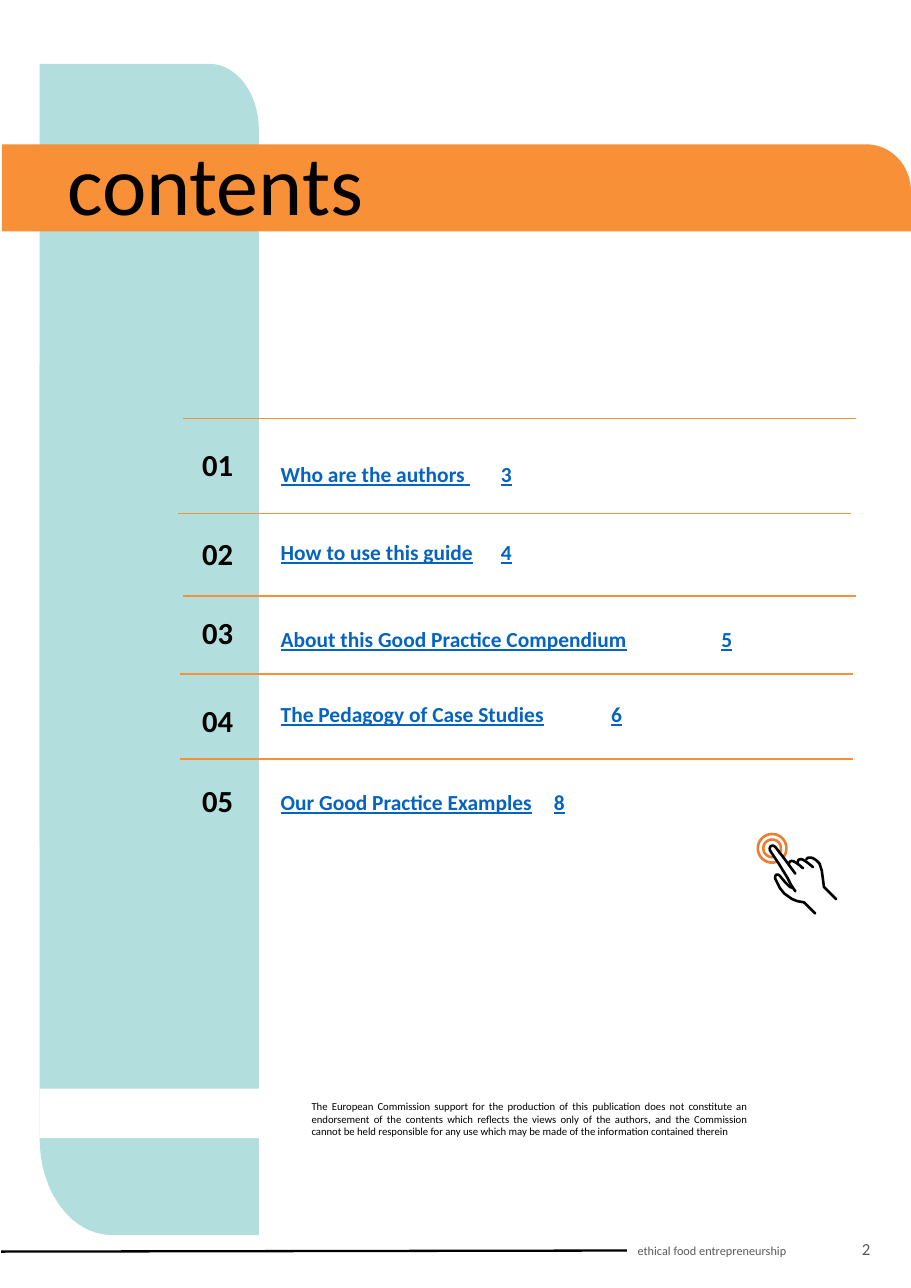
import math
import pptx
import pptx.util
import pptx.dml.color
import pptx.enum.shapes
import pptx.enum.text
import pptx.oxml
import pptx.oxml.ns
from pptx.util import Inches

RGBColor = pptx.dml.color.RGBColor
Align = pptx.enum.text.PP_ALIGN
Anchor = pptx.enum.text.MSO_ANCHOR

TEAL = RGBColor(0xB2, 0xDE, 0xDD)
ORANGE = RGBColor(0xF7, 0x90, 0x37)
RING = RGBColor(0xED, 0x7D, 0x31)
BLUE = RGBColor(0x05, 0x63, 0xC1)
GREY = RGBColor(0x59, 0x59, 0x59)
BLACK = RGBColor(0, 0, 0)
WHITE = RGBColor(255, 255, 255)
FONT = "Calibri"
GRID = 1000  # freeform units per inch


def node(tag, **attrs):
    item = pptx.oxml.parse_xml(f"<{tag} {pptx.oxml.ns.nsdecls('a')}/>")
    for key, value in attrs.items():
        item.set(key, str(value))
    return item


def write(frame, text, size=14, color=BLACK, bold=False, under=False,
          align=Align.LEFT, anchor=Anchor.MIDDLE, space=1, tab=None, gap=None):
    """Fill a text frame; tab is a stop in inches, gap the size of the tab."""
    frame.word_wrap = True
    frame.auto_size = pptx.enum.text.MSO_AUTO_SIZE.NONE
    frame.vertical_anchor = anchor
    par = frame.paragraphs[0]
    if tab:
        stops = node("a:tabLst")
        stops.append(node("a:tab", pos=Inches(tab), algn="l"))
        par._p.get_or_add_pPr().append(stops)
    par.alignment = align
    par.line_spacing = space
    head, mark, tail = text.partition("\t")
    for part in filter(None, (head, mark, tail)):
        run = par.add_run()
        run.text = part
        font = run.font
        font.name, font.bold = FONT, bold
        font.size = pptx.util.Pt(gap if gap and part == "\t" else size)
        font.underline = under and part != "\t"
        font.color.rgb = color


def trace(path):
    """Turn points and cubic curves (six numbers) into a list of points."""
    dots = []
    for step in path:
        if len(step) == 2:
            dots.append(step)
            continue
        ends = [dots[-1], step[:2], step[2:4], step[4:]]
        for i in range(1, 17):
            t = i / 16
            parts = ((1 - t) ** 3, 3 * t * (1 - t) ** 2, 3 * t * t * (1 - t), t ** 3)
            dots.append(tuple(sum(w * e[k] for w, e in zip(parts, ends)) for k in (0, 1)))
    return dots


def arc(x, y, radius, start, stop):
    turns = [math.radians(start + (stop - start) * i / 32) for i in range(33)]
    return [(x + radius * math.cos(a), y + radius * math.sin(a)) for a in turns]


class Page:
    def __init__(self, deck):
        self.slide = deck.slides.add_slide(deck.slide_layouts[5])
        self.shapes = self.slide.shapes

    def title(self, text, x, y, w, h, **style):
        box = self.shapes.title
        box.left, box.top, box.width, box.height = map(Inches, (x, y, w, h))
        write(box.text_frame, text, **style)
        box.element.getparent().append(box.element)

    def text(self, text, x, y, w, h, **style):
        box = self.shapes.add_textbox(*map(Inches, (x, y, w, h)))
        write(box.text_frame, text, **style)
        return box

    def paint(self, shape, color):
        shape.shadow.inherit = False
        shape.fill.solid()
        shape.fill.fore_color.rgb = color
        shape.line.fill.background()

    def rect(self, x, y, w, h, color):
        kind = pptx.enum.shapes.MSO_SHAPE.RECTANGLE
        self.paint(self.shapes.add_shape(kind, *map(Inches, (x, y, w, h))), color)

    def free(self, path, close):
        dots = [(x * GRID, y * GRID) for x, y in trace(path)]
        pen = self.shapes.build_freeform(*dots[0], scale=Inches(1) / GRID)
        pen.add_line_segments(dots[1:], close=close)
        return pen.convert_to_shape()

    def block(self, path, color):
        self.paint(self.free(path, True), color)

    def stroke(self, path, color, width=1.7):
        shape = self.free(path, False)
        shape.shadow.inherit = False
        shape.fill.background()
        shape.line.color.rgb = color
        shape.line.width = pptx.util.Pt(width)
        edge = shape.get_or_add_ln()
        edge.set("cap", "rnd")
        edge.append(node("a:round"))

    def rule(self, x1, y1, x2, y2, color, width):
        kind = pptx.enum.shapes.MSO_CONNECTOR.STRAIGHT
        line = self.shapes.add_connector(kind, *map(Inches, (x1, y1, x2, y2)))
        line.line.color.rgb = color
        line.line.width = pptx.util.Pt(width)
        line.element.spPr.append(node("a:effectLst"))
        return line


def main():
    deck = pptx.Presentation()
    deck.slide_width, deck.slide_height = Inches(8.27), Inches(11.69)
    page = Page(deck)

    # Footer
    foot = page.text("ethical food entrepreneurship", 5.69, 11.15, 1.87, 0.4,
                     size=8, color=GREY)
    base = page.rule(0.01, 11.36, 5.69, 11.35, BLACK, 1.5)
    base.end_connect(foot, 1)
    page.text("2", 7.54, 11.08, 0.46, 0.51, size=11, color=GREY, align=Align.RIGHT)

    # Side panel from two overlapping pieces, with a white band
    for y in (0.58, 3.3):
        page.block([(2.35, y + 7.91), (1.02, y + 7.91),
                    (0.65, y + 7.91, 0.36, y + 7.52, 0.36, y + 7.03),
                    (0.36, y), (1.9, y),
                    (2.15, y, 2.35, y + 0.27, 2.35, y + 0.6)], TEAL)
    page.rect(0.36, 9.88, 2.86, 0.45, WHITE)

    # Title banner
    page.block([(0.02, 2.1), (0.02, 1.31), (7.86, 1.31),
                (8.09, 1.31, 8.27, 1.5, 8.27, 1.74), (8.27, 2.1)], ORANGE)
    page.title("contents", 0.51, 1.25, 7.45, 1.17, size=55,
               anchor=Anchor.TOP, space=0.9)

    # Dividers
    for x, y in ((1.66, 3.8), (1.62, 4.66), (1.66, 5.41), (1.63, 6.12), (1.63, 6.89)):
        page.rule(x + 6.11, y, x, y, ORANGE, 1)

    # Entries: text, number top, text top, tab stop, tab size
    rows = [
        ("Who are the authors \t3", 4.04, 4.01, 2, 32),
        ("How to use this guide\t4", 4.85, 4.82, 2, 14),
        ("About this Good Practice Compendium\t5", 5.57, 5.61, 4, 8),
        ("The Pedagogy of Case Studies\t6", 6.37, 6.29, 3, 14),
        ("Our Good Practice Examples\t8", 7.09, 7.09, 2.48, 14),
    ]
    for i, (text, top, y, tab, gap) in enumerate(rows, 1):
        page.text(f"{i:02}", 1.62, top, 0.71, 0.38, size=20, bold=True,
                  align=Align.CENTER, space=0.9)
        page.text(text, 2.45, y, 5.3, 0.38, color=BLUE, bold=True, under=True,
                  tab=tab, gap=gap)

    # Disclaimer
    page.text("The European Commission support for the production of this publication "
              "does not constitute an endorsement of the contents which reflects the "
              "views only of the authors, and the Commission cannot be held responsible "
              "for any use which may be made of the information contained therein",
              2.73, 9.93, 4.15, 0.45, size=7, align=Align.JUSTIFY, anchor=Anchor.TOP)

    # Tapping hand: rings, then fingers and wrist
    page.stroke(arc(7.01, 7.7, 0.13, 70, 400), RING)
    page.stroke(arc(7.01, 7.7, 0.08, 80, 395), RING)
    hand = [
        [(7.3, 8.19), (7.24, 8.18), (7.19, 8.16), (7.12, 8.11), (7.08, 8.06), (7.04, 7.98),
         (7.03, 7.95, 7.05, 7.92, 7.08, 7.95), (7.13, 8.01), (7.17, 8.05), (7.2, 8.06)],
        [(7.44, 7.84), (7.46, 7.9), (7.48, 8.05), (7.59, 8.16)],
        [(7.32, 7.8), (7.34, 7.77, 7.39, 7.78, 7.44, 7.84)],
        [(7.24, 7.83), (7.25, 7.77, 7.3, 7.8, 7.38, 7.87)],
        [(7.16, 7.85), (7.17, 7.79, 7.21, 7.81, 7.29, 7.88)],
        [(7.3, 8.19), (7.4, 8.29)],
        [(7.22, 8.09), (7.18, 8.03), (7.15, 7.97), (7.07, 7.84), (6.99, 7.72),
         (6.98, 7.68, 7.01, 7.66, 7.04, 7.69), (7.11, 7.78), (7.22, 7.93)],
    ]
    for path in hand:
        page.stroke(path, BLACK)

    deck.save("out.pptx")


if __name__ == "__main__":
    main()
